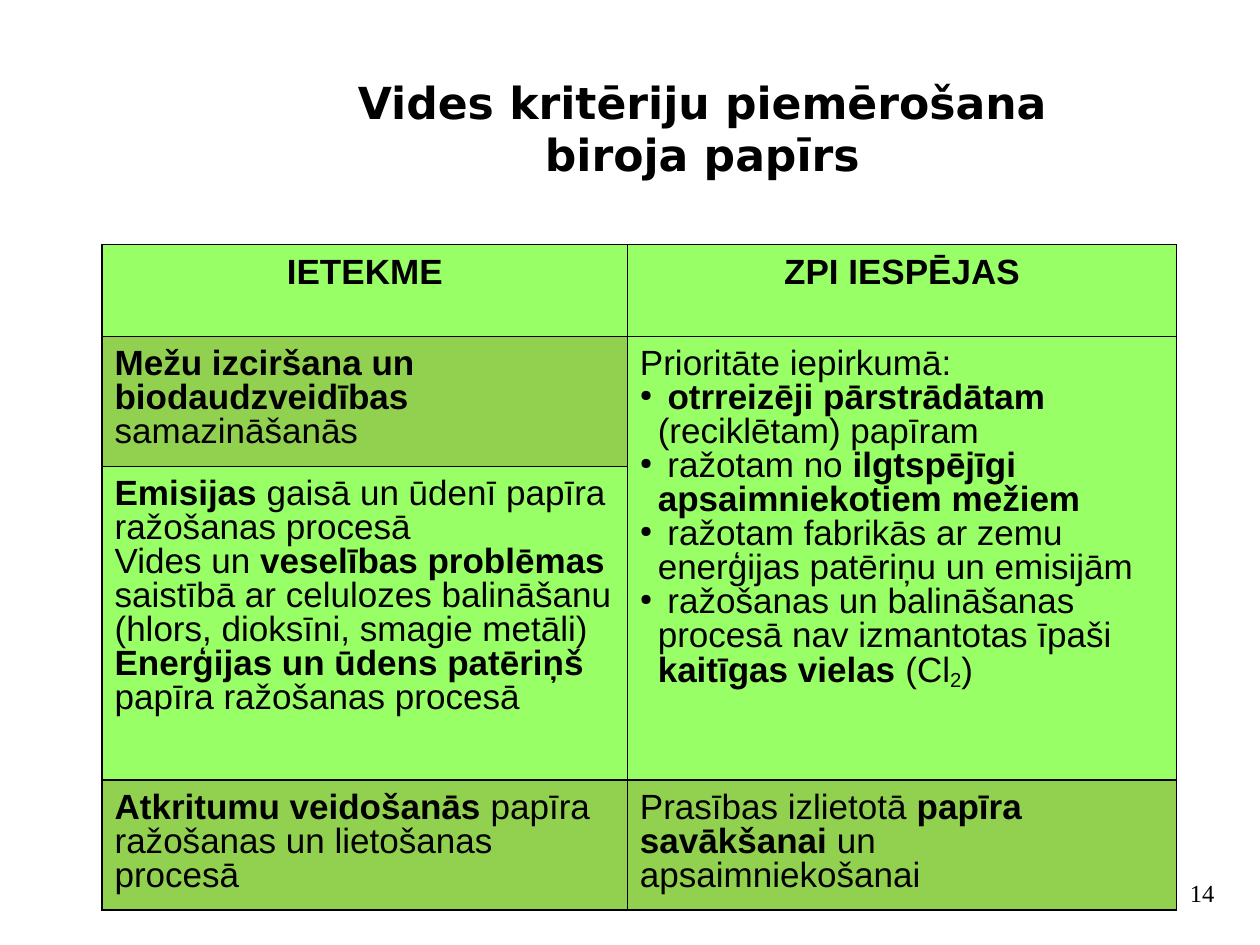
import lxml.etree
import pptx
import pptx.dml.color
import pptx.enum.text
import pptx.oxml
import pptx.oxml.ns
import pptx.util

Cm = pptx.util.Cm
Pt = pptx.util.Pt
ALIGN = pptx.enum.text.PP_ALIGN
ANCHOR = pptx.enum.text.MSO_ANCHOR

BLACK, LIGHT_GREEN, DARK_GREEN = "000000", "99FF66", "92D050"
TITLE = ["Vides kritēriju piemērošana", "biroja papīrs"]
PAGE_NUMBER = "14"
HEADERS = ["IETEKME", "ZPI IESPĒJAS"]
IMPACTS = [
    ["**Mežu izciršana un biodaudzveidības **samazināšanās"],
    [
        "**Emisijas** gaisā un ūdenī papīra ražošanas procesā",
        "Vides un **veselības problēmas **saistībā ar celulozes balināšanu "
        "(hlors, dioksīni, smagie metāli)",
        "**Enerģijas un ūdens patēriņš **papīra ražošanas procesā",
    ],
    ["**Atkritumu veidošanās **papīra ražošanas un lietošanas procesā"],
]
PRIORITY_HEADING = "Prioritāte iepirkumā:"
PRIORITIES = [
    " **otrreizēji pārstrādātam **(reciklētam) papīram",
    " ražotam no **ilgtspējīgi apsaimniekotiem mežiem**",
    " ražotam fabrikās ar zemu enerģijas patēriņu un emisijām",
    " ražošanas un balināšanas procesā nav izmantotas īpaši **kaitīgas vielas **(Cl_2_)",
]
WASTE_OPTION = "Prasības izlietotā **papīra savākšanai **un apsaimniekošanai"

COLUMN_WIDTHS = [10.59, 11.07]
ROW_HEIGHTS = [1.85, 2.62, 6.32, 2.62]
ROW_FILLS = [LIGHT_GREEN, DARK_GREEN, LIGHT_GREEN, DARK_GREEN]
HANGING = Cm(0.36)


def color(value):
    return pptx.dml.color.RGBColor.from_string(value)


def write(paragraph, text, size=20, font="Arial", fill=BLACK, bold=False,
          align=ALIGN.LEFT, spacing=None):
    paragraph.alignment = align
    paragraph.line_spacing = spacing
    for strong_index, part in enumerate(text.split("**")):
        for sub_index, piece in enumerate(part.split("_")):
            if not piece:
                continue
            run = paragraph.add_run()
            run.text = piece
            run.font.size = Pt(size)
            run.font.name = font
            run.font.bold = bold or strong_index % 2 == 1
            run.font.color.rgb = color(fill)
            if sub_index % 2:
                run.font._element.set("baseline", "-14000")


def hang(paragraph, bullet):
    properties = paragraph._p.get_or_add_pPr()
    properties.set("marL", str(HANGING))
    properties.set("indent", str(-HANGING))
    if bullet:
        namespace = pptx.oxml.ns.nsdecls("a")
        for xml in (
            f'<a:buClr {namespace}><a:srgbClr val="{BLACK}"/></a:buClr>',
            f'<a:buSzPct {namespace} val="45000"/>',
            f'<a:buChar {namespace} char="●"/>',
        ):
            properties.append(pptx.oxml.parse_xml(xml))


def set_margins(holder, left, top, right, bottom):
    holder.margin_left, holder.margin_top = Cm(left), Cm(top)
    holder.margin_right, holder.margin_bottom = Cm(right), Cm(bottom)


def format_cell(cell, fill):
    properties = cell._tc.get_or_add_tcPr()
    for side in ("lnL", "lnR", "lnT", "lnB"):
        line = lxml.etree.SubElement(properties, pptx.oxml.ns.qn(f"a:{side}"), w=str(Pt(1)))
        solid = lxml.etree.SubElement(line, pptx.oxml.ns.qn("a:solidFill"))
        lxml.etree.SubElement(solid, pptx.oxml.ns.qn("a:srgbClr"), val=BLACK)
    cell.fill.solid()
    cell.fill.fore_color.rgb = color(fill)
    cell.vertical_anchor = ANCHOR.TOP
    set_margins(cell, 0.25, 0.25, 0.25, 0.13)


def fill_cell(cell, texts, **style):
    frame = cell.text_frame
    for index, text in enumerate(texts):
        paragraph = frame.add_paragraph() if index else frame.paragraphs[0]
        write(paragraph, text, spacing=0.87, **style)
    return frame.paragraphs


def add_title(slide):
    title = slide.shapes.title
    title.left, title.top, title.width, title.height = Cm(5.69), Cm(1.32), Cm(16.94), Cm(2.01)
    frame = title.text_frame
    frame.word_wrap = True
    frame.auto_size = pptx.enum.text.MSO_AUTO_SIZE.NONE
    frame.vertical_anchor = ANCHOR.TOP
    set_margins(frame, 0.25, 0.19, 0.25, 0.13)
    paragraph = frame.paragraphs[0]
    for index, line in enumerate(TITLE):
        if index:
            paragraph.add_line_break()
        write(paragraph, line, size=25.2, font="DejaVu Sans", bold=True, align=ALIGN.CENTER,
              spacing=1.0)


def add_page_number(slide):
    box = slide.shapes.add_textbox(Cm(23.7), Cm(17.58), Cm(1.07), Cm(0.84))
    box.text_frame.word_wrap = True
    set_margins(box.text_frame, 0, 0.13, 0, 0.13)
    write(box.text_frame.paragraphs[0], PAGE_NUMBER, size=14, font="Times New Roman",
          align=ALIGN.CENTER)


def add_criteria_table(slide):
    table = slide.shapes.add_table(
        len(ROW_HEIGHTS), len(COLUMN_WIDTHS), Cm(2.06), Cm(4.93),
        Cm(sum(COLUMN_WIDTHS)), Cm(sum(ROW_HEIGHTS))).table
    table.first_row = table.horz_banding = False
    for column, width in zip(table.columns, COLUMN_WIDTHS):
        column.width = Cm(width)
    for row, height, fill in zip(table.rows, ROW_HEIGHTS, ROW_FILLS):
        row.height = Cm(height)
        for cell in row.cells:
            format_cell(cell, fill)

    for index, header in enumerate(HEADERS):
        fill_cell(table.cell(0, index), [header], bold=True, align=ALIGN.CENTER)
    for index, impact in enumerate(IMPACTS, start=1):
        fill_cell(table.cell(index, 0), impact)

    options = table.cell(1, 1)
    options.merge(table.cell(2, 1))
    options.fill.fore_color.rgb = color(LIGHT_GREEN)
    for index, paragraph in enumerate(fill_cell(options, [PRIORITY_HEADING] + PRIORITIES)):
        hang(paragraph, bullet=index > 0)
    fill_cell(table.cell(3, 1), [WASTE_OPTION])


def main():
    presentation = pptx.Presentation()
    presentation.slide_width, presentation.slide_height = Cm(25.4), Cm(19.05)
    slide = presentation.slides.add_slide(presentation.slide_layouts.get_by_name("Title Only"))
    add_title(slide)
    add_page_number(slide)
    add_criteria_table(slide)
    presentation.save("out.pptx")


if __name__ == "__main__":
    main()
